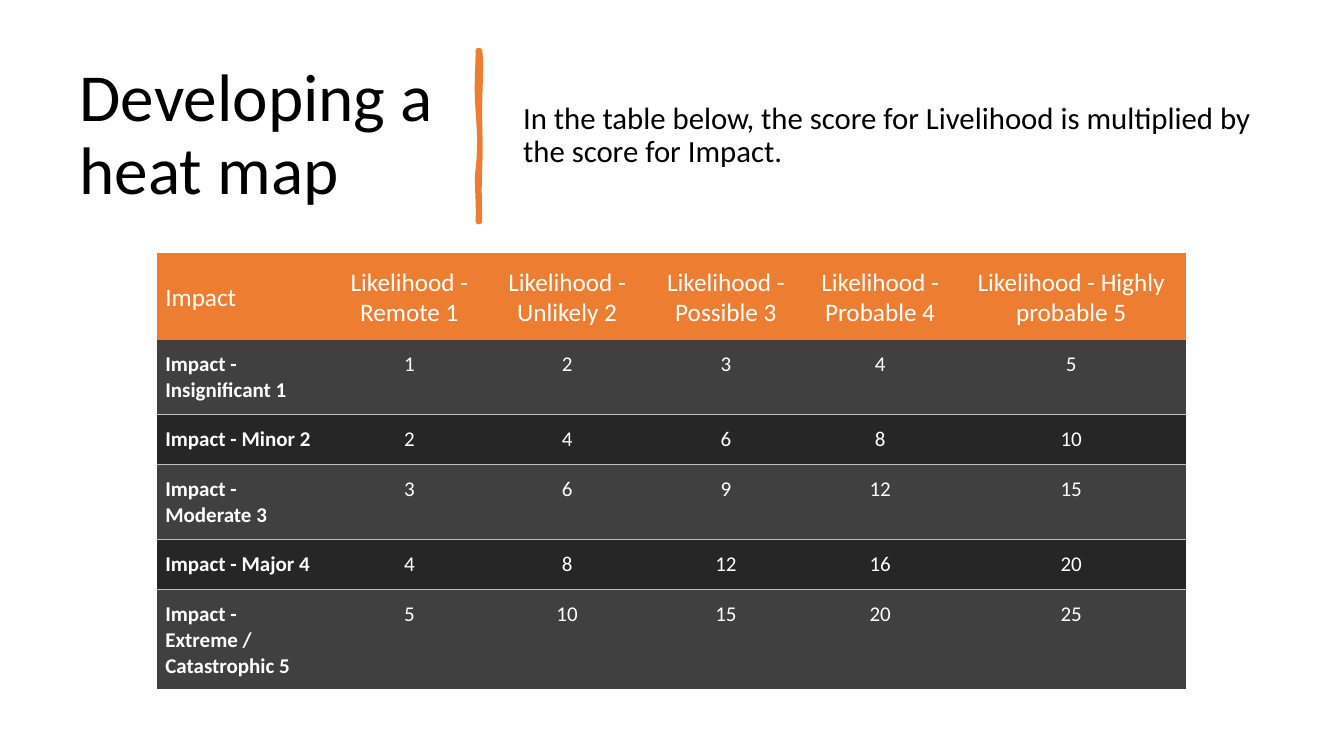
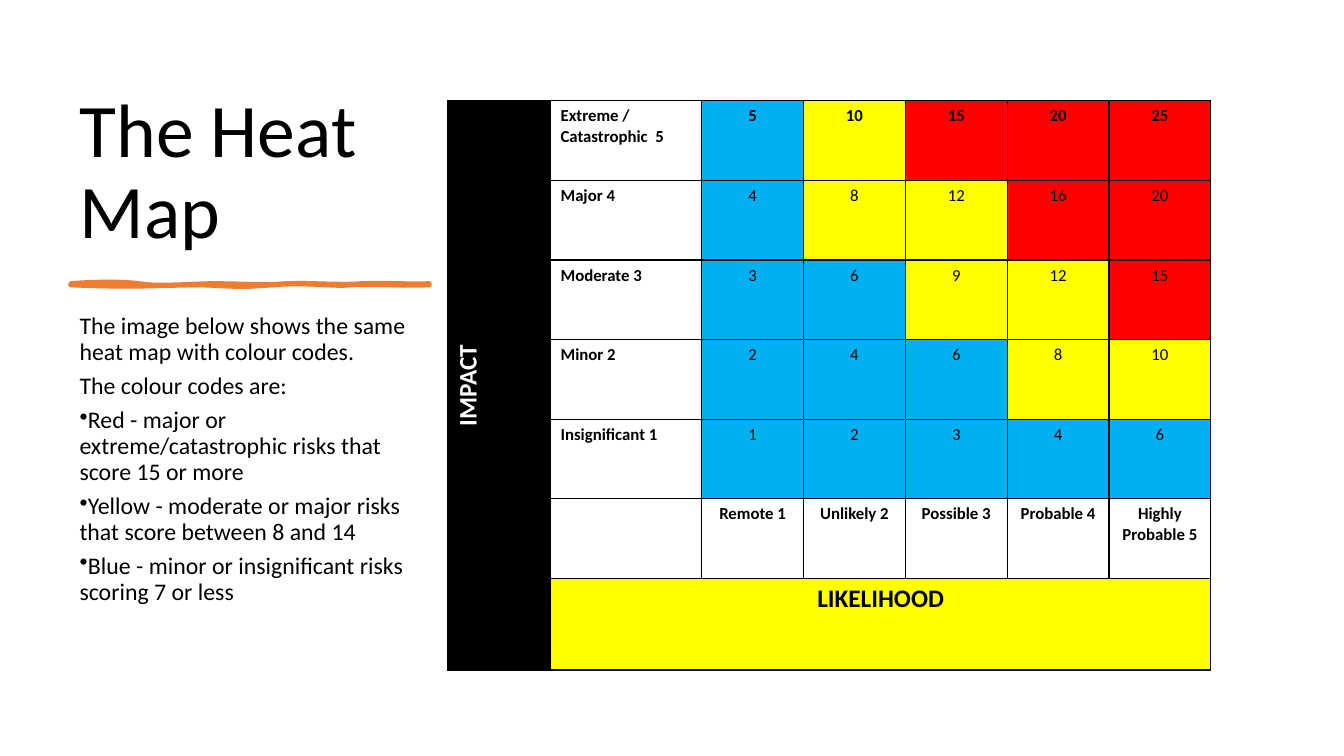
import pptx
import pptx.dml.color
import pptx.enum.text
import pptx.oxml.ns
import pptx.util
from lxml import etree

PX = 9144  # EMU in one px, 100 px to the inch
FONT = "Calibri"

RGB = pptx.dml.color.RGBColor
BLACK = RGB(0x00, 0x00, 0x00)
WHITE = RGB(0xFF, 0xFF, 0xFF)
ORANGE = RGB(0xED, 0x7D, 0x31)
CHARCOAL = RGB(0x40, 0x40, 0x40)
DARK = RGB(0x26, 0x26, 0x26)
SILVER = RGB(0xBF, 0xBF, 0xBF)
RED = RGB(0xFF, 0x00, 0x00)
YELLOW = RGB(0xFF, 0xFF, 0x00)
BLUE = RGB(0x00, 0xB0, 0xF0)

LEFT = pptx.enum.text.PP_ALIGN.LEFT
CENTER = pptx.enum.text.PP_ALIGN.CENTER
TOP = pptx.enum.text.MSO_ANCHOR.TOP
MIDDLE = pptx.enum.text.MSO_ANCHOR.MIDDLE
BOTTOM = pptx.enum.text.MSO_ANCHOR.BOTTOM

NO_STYLE_NO_GRID = "{2D5ABB26-0587-4C30-8999-92F81FD0307C}"
CURVE_STEPS = 8

# Brush strokes: a start point, then three points for each Bezier curve
VERTICAL_BRUSH = [
    (476, 50),
    (478, 62), (476, 88), (476, 110), (476, 132), (477, 144), (476, 168),
    (475, 193), (476, 199), (476, 220), (475, 220), (475, 220), (474, 220),
    (475, 196), (472, 183), (474, 167), (476, 151), (476, 138), (474, 110),
    (472, 83), (474, 67), (474, 50),
]
HORIZONTAL_BRUSH = [
    (70, 281),
    (97, 279), (121, 279), (138, 281), (155, 284), (177, 282), (209, 281),
    (241, 281), (260, 283), (284, 281), (308, 280), (339, 283), (359, 281),
    (379, 280), (412, 282), (426, 281), (426, 282), (426, 283), (426, 283),
    (408, 284), (364, 282), (348, 283), (332, 285), (304, 280), (270, 283),
    (235, 286), (231, 284), (199, 283), (166, 283), (132, 286), (70, 283),
]

LIKELIHOODS = ["Remote 1", "Unlikely 2", "Possible 3", "Probable 4", "Highly probable 5"]
IMPACTS = ["Insignificant 1", "Minor 2", "Moderate 3", "Major 4",
           "Extreme / Catastrophic 5"]

HEAT_ROWS = [
    ("Extreme / Catastrophic  5", [5, 10, 15, 20, 25]),
    ("Major 4", [4, 8, 12, 16, 20]),
    ("Moderate 3", [3, 6, 9, 12, 15]),
    ("Minor 2", [2, 4, 6, 8, 10]),
    ("Insignificant 1", [1, 2, 3, 4, 6]),
]
HEAT_COLUMNS = ["Remote 1", "Unlikely 2", "Possible 3", "Probable 4", "Highly Probable 5"]

INTRO = ["The image below shows the same heat map with colour codes.",
         "The colour codes are:"]
COLOUR_CODES = [
    "Red - major or extreme/catastrophic risks that score 15 or more",
    "Yellow - moderate or major risks that score between 8 and 14",
    "Blue - minor or insignificant risks scoring 7 or less",
]


def px(length):
    return pptx.util.Emu(round(length * PX))


def format_paragraph(paragraph, size, color=BLACK, bold=False, align=LEFT):
    paragraph.alignment = align
    for run in paragraph.runs:
        run.font.name = FONT
        run.font.size = pptx.util.Pt(size)
        run.font.bold = bold
        run.font.color.rgb = color


def set_bullet(paragraph):
    properties = paragraph._p.get_or_add_pPr()
    properties.set("marL", "0")
    properties.set("indent", "0")
    etree.SubElement(properties, pptx.oxml.ns.qn("a:buChar")).set("char", "•")


def add_titled_slide(deck, title, box, size, anchor):
    slide = deck.slides.add_slide(deck.slide_layouts[5])
    heading = slide.shapes.title
    heading.left, heading.top, heading.width, heading.height = map(px, box)
    frame = heading.text_frame
    frame.text = title
    frame.word_wrap = True
    frame.auto_size = pptx.enum.text.MSO_AUTO_SIZE.NONE
    frame.vertical_anchor = anchor
    format_paragraph(frame.paragraphs[0], size)
    frame.paragraphs[0].line_spacing = 0.9
    return slide


def add_body(slide, lines, box, size, anchor, bullets=()):
    frame = slide.shapes.add_textbox(*map(px, box)).text_frame
    frame.word_wrap = True
    frame.vertical_anchor = anchor
    frame.text = "\n".join([*lines, *bullets])
    for index, paragraph in enumerate(frame.paragraphs):
        format_paragraph(paragraph, size)
        paragraph.line_spacing = 0.9
        paragraph.space_after = pptx.util.Pt(6)
        if index >= len(lines):
            set_bullet(paragraph)


def curve_points(points):
    """Sample a chain of cubic Bezier curves."""
    sampled = []
    for first in range(0, len(points) - 1, 3):
        corners = points[first:first + 4]
        for step in range(1, CURVE_STEPS + 1):
            t = step / CURVE_STEPS
            weights = ((1 - t) ** 3, 3 * t * (1 - t) ** 2, 3 * t * t * (1 - t), t ** 3)
            sampled.append(tuple(
                px(sum(w * corner[axis] for w, corner in zip(weights, corners)))
                for axis in (0, 1)))
    return sampled


def add_brush_stroke(slide, points, weight):
    builder = slide.shapes.build_freeform(*map(px, points[0]))
    builder.add_line_segments(curve_points(points), close=True)
    stroke = builder.convert_to_shape()
    stroke.shadow.inherit = False
    stroke.fill.solid()
    stroke.fill.fore_color.rgb = ORANGE
    stroke.line.color.rgb = ORANGE
    stroke.line.width = pptx.util.Pt(weight)
    etree.SubElement(stroke.line._get_or_add_ln(), pptx.oxml.ns.qn("a:round"))


def add_plain_table(slide, left, top, widths, heights):
    frame = slide.shapes.add_table(len(heights), len(widths), px(left), px(top),
                                   px(sum(widths)), px(sum(heights)))
    table = frame.table
    table.horz_banding = False
    table._tbl.tblPr.find(pptx.oxml.ns.qn("a:tableStyleId")).text = NO_STYLE_NO_GRID
    for column, width in zip(table.columns, widths):
        column.width = px(width)
    for row, height in zip(table.rows, heights):
        row.height = px(height)
    return table


def add_borders(cell, sides, color):
    """Draw 1 pt borders; sides come in the order L, R, T, B."""
    for side in sides:
        line = etree.SubElement(cell._tc.get_or_add_tcPr(),
                                pptx.oxml.ns.qn("a:ln" + side), w="12700")
        solid = etree.SubElement(line, pptx.oxml.ns.qn("a:solidFill"))
        etree.SubElement(solid, pptx.oxml.ns.qn("a:srgbClr"), val=str(color))


def fill_cell(cell, text, fill, size, **text_style):
    cell.text = str(text)
    format_paragraph(cell.text_frame.paragraphs[0], size, **text_style)
    cell.fill.solid()
    cell.fill.fore_color.rgb = fill


def score_color(score):
    if score >= 15:
        return RED
    return YELLOW if score >= 8 else BLUE


def add_score_table(slide):
    table = add_plain_table(slide, 156, 251, [175, 151, 162, 153, 153, 226],
                            [86, 74, 50, 74, 50, 99])
    rows = [["Impact"] + ["Likelihood - " + name for name in LIKELIHOODS]]
    for impact, name in enumerate(IMPACTS, start=1):
        rows.append(["Impact - " + name] + [impact * step for step in range(1, 6)])

    for r, values in enumerate(rows):
        header = r == 0
        fill = ORANGE if header else CHARCOAL if r % 2 else DARK
        border = {1: "B", 2: "T", 3: "B", 4: "T"}.get(r, "")
        for c, value in enumerate(values):
            cell = table.cell(r, c)
            cell.margin_left, cell.margin_top = px(8), px(12)
            cell.margin_right = cell.margin_bottom = px(9)
            cell.vertical_anchor = MIDDLE if header else TOP
            add_borders(cell, border, SILVER)
            fill_cell(cell, value, fill, 18 if header else 15, color=WHITE,
                      bold=c == 0 and not header, align=CENTER if c else LEFT)


def add_heat_map(slide):
    table = add_plain_table(slide, 444, 100, [102, 150] + [101] * 5, [79] * 6 + [90])
    for cell in table.iter_cells():
        add_borders(cell, "LRTB", BLACK)

    # Axis titles
    impact_axis = table.cell(0, 0)
    impact_axis.merge(table.cell(6, 0))
    impact_axis._tc.get_or_add_tcPr().set("vert", "vert270")
    fill_cell(impact_axis, "IMPACT", BLACK, 18, color=WHITE, bold=True, align=CENTER)
    likelihood_axis = table.cell(6, 1)
    likelihood_axis.merge(table.cell(6, 6))
    fill_cell(likelihood_axis, "LIKELIHOOD", YELLOW, 18, bold=True, align=CENTER)

    # Scores with their impact labels
    for r, (impact, scores) in enumerate(HEAT_ROWS):
        fill_cell(table.cell(r, 1), impact, WHITE, 12, bold=True)
        for c, score in enumerate(scores, start=2):
            fill_cell(table.cell(r, c), score, score_color(score), 12,
                      bold=r == 0, align=CENTER)

    # Likelihood labels
    for c, likelihood in enumerate(HEAT_COLUMNS, start=2):
        fill_cell(table.cell(5, c), likelihood, WHITE, 12, bold=True, align=CENTER)


def main():
    deck = pptx.Presentation()
    deck.slide_width, deck.slide_height = px(1333), px(750)

    # Developing a heat map
    scoring = add_titled_slide(deck, "Developing a heat map", (69, 55, 374, 160), 48, MIDDLE)
    add_brush_stroke(scoring, VERTICAL_BRUSH, 3.25)
    add_body(scoring, ["In the table below, the score for Livelihood is multiplied by "
                       "the score for Impact."], (509, 55, 754, 160), 22, MIDDLE)
    add_score_table(scoring)

    # The heat map
    heat_map = add_titled_slide(deck, "The Heat Map", (69, 70, 375, 188), 54, BOTTOM)
    add_brush_stroke(heat_map, HORIZONTAL_BRUSH, 3)
    add_body(heat_map, INTRO, (69, 307, 375, 373), 17, TOP, COLOUR_CODES)
    add_heat_map(heat_map)

    deck.save("out.pptx")


if __name__ == "__main__":
    main()
